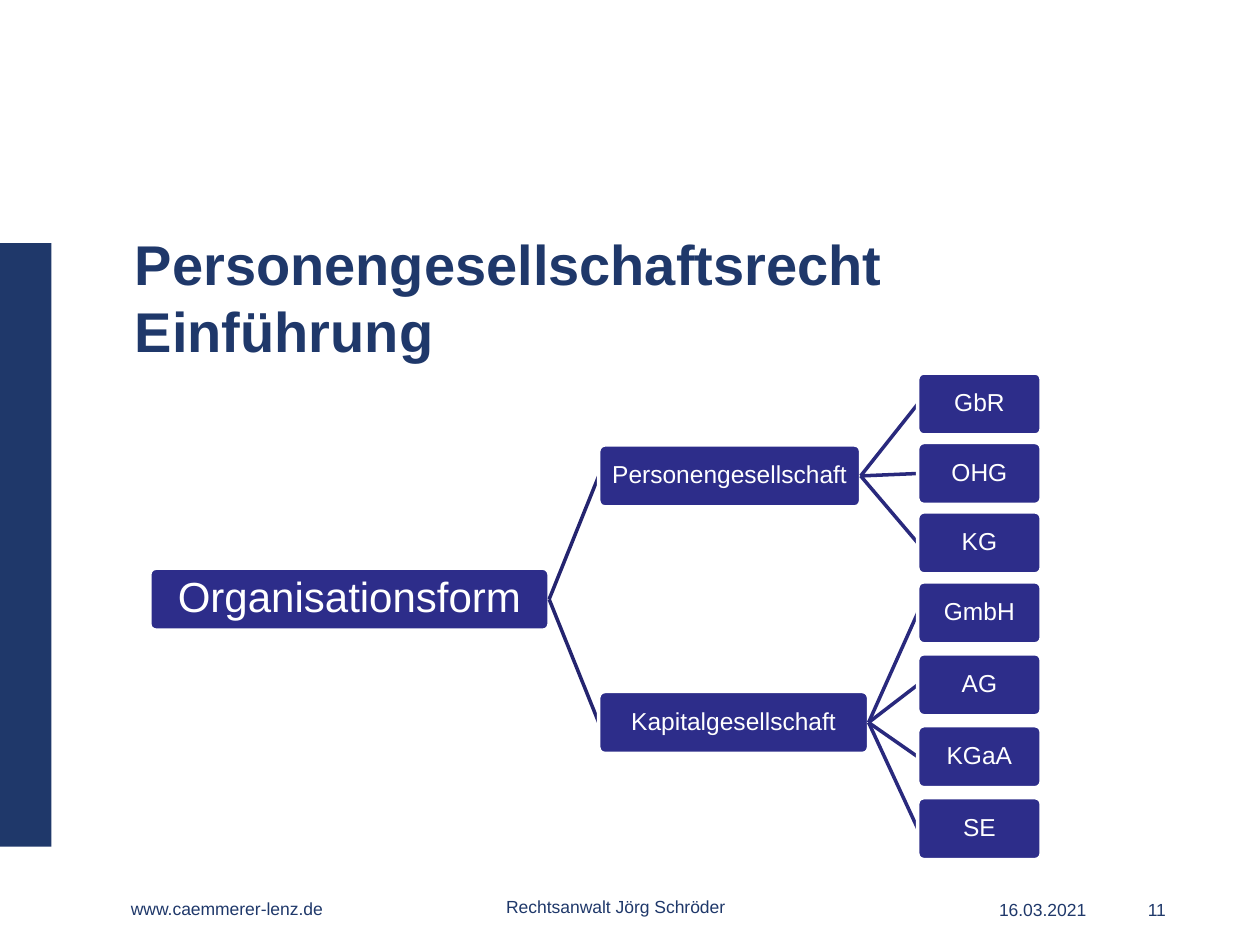
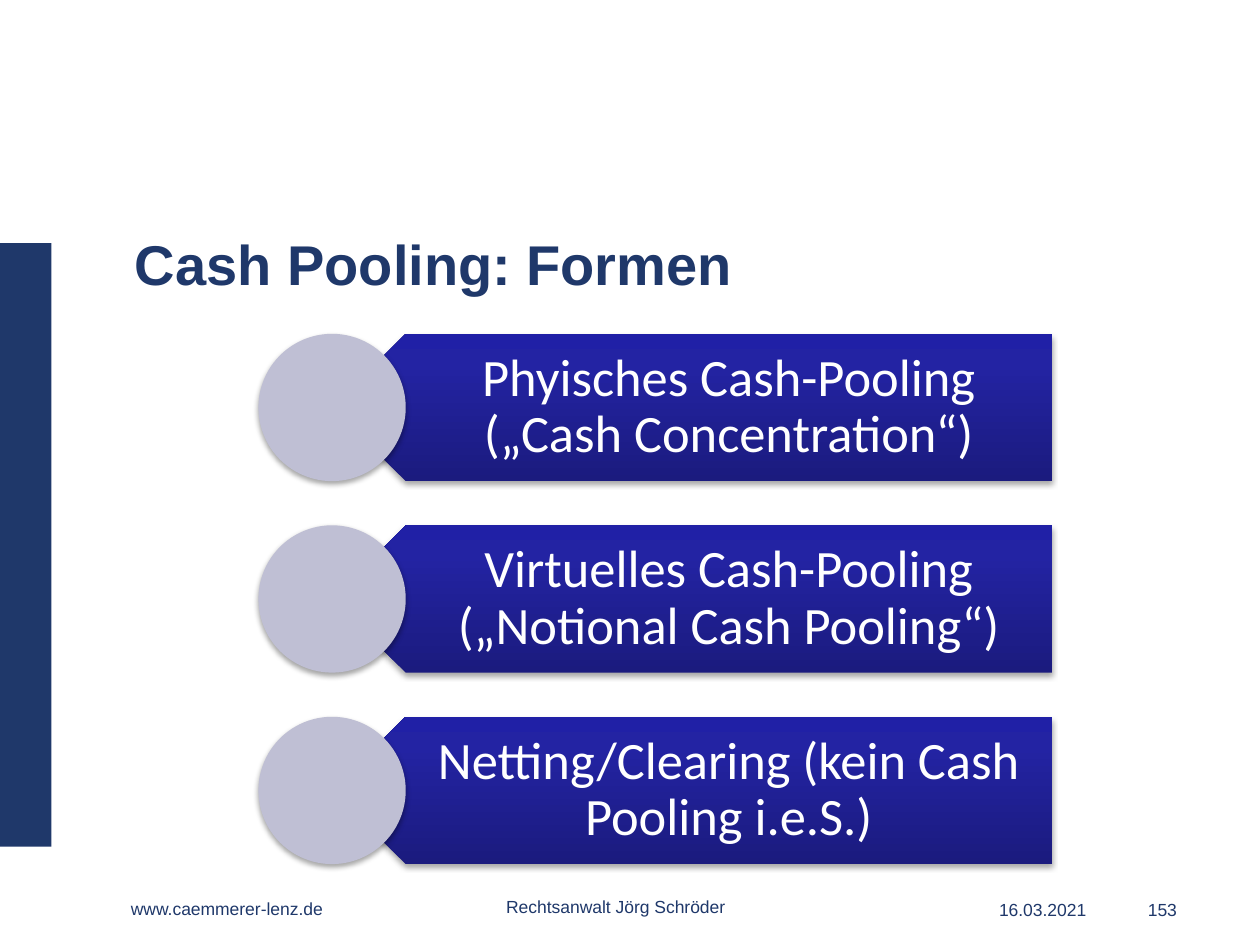
from lxml.etree import SubElement
from pptx import Presentation
from pptx.dml.color import RGBColor
from pptx.enum.shapes import MSO_CONNECTOR as CONN, MSO_SHAPE as SHAPE
from pptx.enum.text import MSO_ANCHOR as ANCHOR, PP_ALIGN as ALIGN
from pptx.oxml.ns import qn
from pptx.util import Cm, Pt

NAVY = RGBColor(0x1F, 0x38, 0x6A)
WHITE = RGBColor(0xFF, 0xFF, 0xFF)
NODE = RGBColor(0x2D, 0x2D, 0x8A)
TRUNK = RGBColor(0x24, 0x24, 0x6F)
TWIG = RGBColor(0x29, 0x29, 0x7D)
LILAC = RGBColor(0xBF, 0xBF, 0xD4)
BLACK = RGBColor(0, 0, 0)
# Plate gradient from bottom to top: position in percent, colour
PLATE_STOPS = [(0, RGBColor(0x1B, 0x1B, 0x7E)),
               (80, RGBColor(0x23, 0x23, 0xA3)),
               (100, RGBColor(0x20, 0x20, 0xA6))]

BODY_FONT, PLATE_FONT = "Arial", "Calibri"
TREE_BOX = (3.02, 7.52, 17.97, 9.81)
LIST_BOX = (5.21, 6.73, 16, 10.69)


def write(shape, lines, size, color, font=BODY_FONT, bold=False,
          align=ALIGN.LEFT, spacing=None, insets=(0, 0, 0, 0), anchor=ANCHOR.TOP):
    """Fill a shape with paragraphs; insets are left, top, right, bottom."""
    tf = shape.text_frame
    tf.word_wrap = True
    tf.vertical_anchor = anchor
    tf.margin_left, tf.margin_top, tf.margin_right, tf.margin_bottom = map(Cm, insets)
    tf.text = "\n".join(lines)
    for p in tf.paragraphs:
        p.alignment = align
        p.line_spacing = spacing
        for r in p.runs:
            r.font.name, r.font.size, r.font.bold = font, Pt(size), bold
            r.font.color.rgb = color


def add_block(slide, kind, box, color=None, outline=None):
    """Add a preset shape without shadow, with an optional outline."""
    sp = slide.shapes.add_shape(kind, *map(Cm, box))
    sp.shadow.inherit = False
    if color is not None:
        sp.fill.solid()
        sp.fill.fore_color.rgb = color
    if outline is None:
        sp.line.fill.background()
    else:
        sp.line.color.rgb = outline
        sp.line.width = Pt(2)
    return sp


def add_color(parent, color):
    return SubElement(parent, qn("a:srgbClr"), val=str(color))


def add_soft_shadow(sp):
    effects = sp._element.spPr.find(qn("a:effectLst"))
    shadow = SubElement(effects, qn("a:outerShdw"), blurRad="40000", dist="23000",
                        dir="5400000", rotWithShape="0")
    SubElement(add_color(shadow, BLACK), qn("a:alpha"), val="35000")


def add_frame(prs, title_lines, number):
    """New slide with side band, title and footer."""
    slide = prs.slides.add_slide(prs.slide_layouts[6])
    add_block(slide, SHAPE.RECTANGLE, (0, 4.9, 1.04, 12.17), NAVY)

    # Footer: left, top, width, text, alignment
    footer = [(2.64, 18.01, 4.67, "www.caemmerer-lenz.de", ALIGN.LEFT),
              (20.14, 18.03, 2.67, "16.03.2021", ALIGN.LEFT),
              (23.14, 18.03, 2.26, number, ALIGN.LEFT),
              (9.91, 17.98, 5, "Rechtsanwalt Jörg Schröder", ALIGN.CENTER)]
    for left, top, width, text, align in footer:
        tb = slide.shapes.add_textbox(*map(Cm, (left, top, width, 0.6)))
        write(tb, [text], 10, NAVY, align=align, spacing=1.2)

    title = slide.shapes.add_textbox(*map(Cm, (2.49, 4.52, 21.23, 2.11)))
    write(title, title_lines, 32, NAVY, bold=True, insets=(0.23, 0.1, 0.23, 0.1))
    return slide


def add_node(slide, label, left, top, width, size=14):
    height = 1.25
    sp = add_block(slide, SHAPE.ROUNDED_RECTANGLE, (left, top, width, height),
                   NODE, WHITE)
    sp.adjustments[0] = 0.1
    write(sp, [label], size, WHITE, align=ALIGN.CENTER, spacing=0.9,
          insets=(0.05,) * 4, anchor=ANCHOR.MIDDLE)
    return sp


def add_branch_line(slide, parent, left, top, color):
    """Line from the parent's right side to the left side of a node at left, top."""
    middle = parent.height // 2
    line = slide.shapes.add_connector(CONN.STRAIGHT, parent.left + parent.width,
                                      parent.top + middle, Cm(left), Cm(top) + middle)
    line.line.color.rgb = color
    line.line.width = Pt(2)
    SubElement(line._element.spPr, qn("a:effectLst"))


def add_tree(slide, box, root_label, branches):
    x, y = box[:2]
    branch_x, leaf_x = x + 9.05, x + 15.48
    root_top = sum(b[1] for b in branches) / len(branches)
    root = add_node(slide, root_label, x, y + root_top, 8.05, 24)
    for label, top, width, leaf_top, pitch, leaves in branches:
        add_branch_line(slide, root, branch_x, y + top, TRUNK)
        branch = add_node(slide, label, branch_x, y + top, width)
        for i, leaf in enumerate(leaves):
            leaf_y = y + leaf_top + i * pitch
            add_branch_line(slide, branch, leaf_x, leaf_y, TWIG)
            add_node(slide, leaf, leaf_x, leaf_y, 2.49)


def add_plate(slide, box, text):
    """Pentagon pointing left with a vertical gradient."""
    sp = add_block(slide, SHAPE.PENTAGON, box)
    sp._element.spPr.xfrm.set("flipH", "1")
    sp.fill.gradient()
    sp.fill.gradient_angle = 90
    stops = sp._element.spPr.find(".//" + qn("a:gsLst"))
    stops.clear()
    for percent, color in PLATE_STOPS:
        add_color(SubElement(stops, qn("a:gs"), pos=str(percent * 1000)), color)
    add_soft_shadow(sp)
    write(sp, [text], 30, WHITE, PLATE_FONT, align=ALIGN.CENTER, spacing=0.9,
          insets=(1.32, 0.3, 0.58, 0.3), anchor=ANCHOR.MIDDLE)


def add_circle_list(slide, box, items):
    x, y, width, height = box
    size = 2.97
    pitch = (height - size) / (len(items) - 1)
    for i, text in enumerate(items):
        top = y + i * pitch
        add_plate(slide, (x + size / 2, top, width - size / 2, size), text)
        add_soft_shadow(add_block(slide, SHAPE.OVAL, (x, top, size, size), LILAC))


def main():
    prs = Presentation()
    prs.slide_width, prs.slide_height = Cm(25.4), Cm(19.05)

    # Forms of organisation: label, top, width, first leaf top, leaf pitch, leaves
    slide = add_frame(prs, ["Personengesellschaftsrecht", "Einführung"], "11")
    add_tree(slide, TREE_BOX, "Organisationsform", [
        ("Personengesellschaft", 1.45, 5.28, 0, 1.4, ["GbR", "OHG", "KG"]),
        ("Kapitalgesellschaft", 6.42, 5.44, 4.21, 1.45, ["GmbH", "AG", "KGaA", "SE"]),
    ])

    # Forms of cash pooling
    slide = add_frame(prs, ["Cash Pooling: Formen"], "153")
    add_circle_list(slide, LIST_BOX, [
        "Phyisches Cash-Pooling („Cash Concentration“)",
        "Virtuelles Cash-Pooling („Notional Cash Pooling“)",
        "Netting/Clearing (kein Cash Pooling i.e.S.)",
    ])
    prs.save("out.pptx")


if __name__ == "__main__":
    main()
